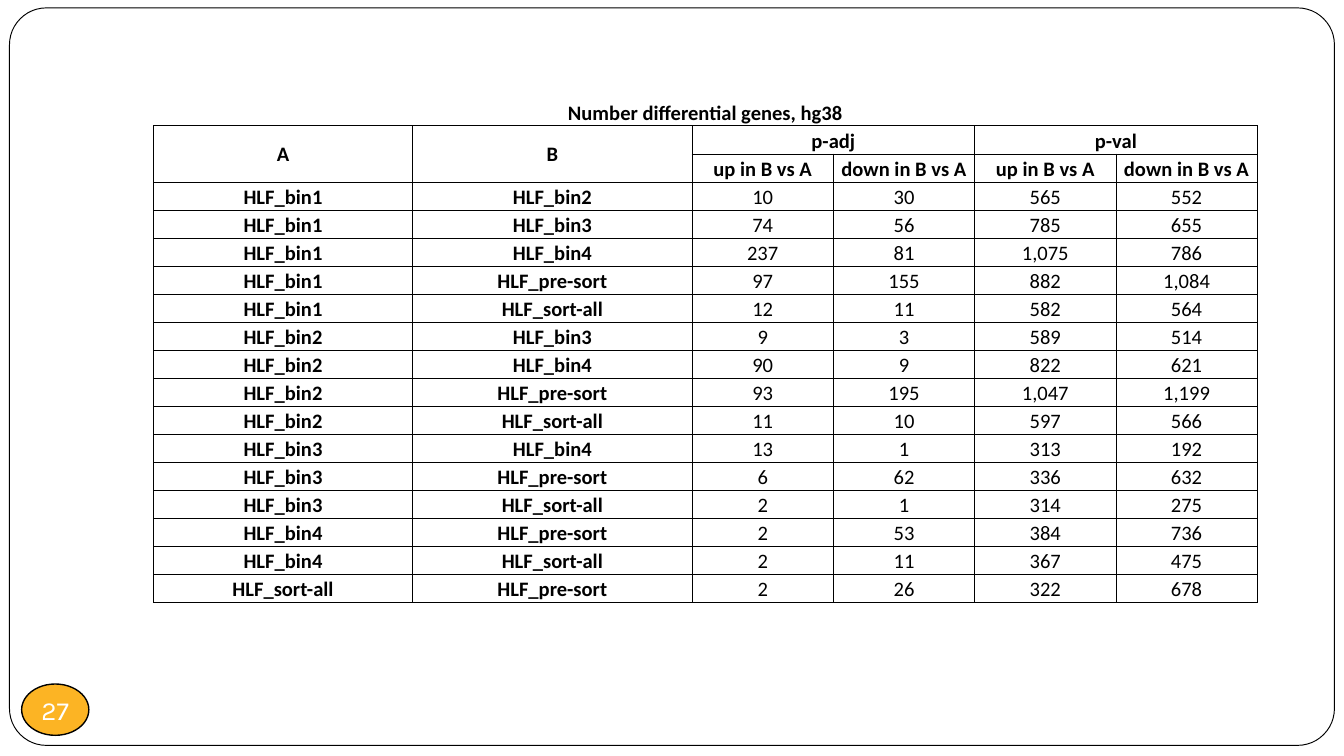
from typing import NamedTuple

from lxml.etree import SubElement
from pptx import Presentation
from pptx.dml.color import RGBColor
from pptx.enum.shapes import MSO_SHAPE
from pptx.enum.text import MSO_ANCHOR, PP_ALIGN
from pptx.oxml.ns import qn
from pptx.util import Cm, Pt

COLORS = {"black": "000000", "white": "FFFFFF", "badge": "FCB424"}
BORDER_WIDTH = Pt(0.5)
COLUMN_WIDTHS = [Cm(4.9), Cm(5.28)] + [Cm(2.67)] * 4
ROW_HEIGHT = Cm(0.53)
TITLE = "Number differential genes, hg38"
DIRECTIONS = ("up in B vs A", "down in B vs A")


class Comparison(NamedTuple):
    a: str
    b: str
    adjusted_up: int
    adjusted_down: int
    value_up: int
    value_down: int


class Span(NamedTuple):
    """A merged block of cells, by its first and last row and column."""
    top: int
    left: int
    bottom: int
    right: int


COMPARISONS = [
    Comparison("HLF_bin1", "HLF_bin2", 10, 30, 565, 552),
    Comparison("HLF_bin1", "HLF_bin3", 74, 56, 785, 655),
    Comparison("HLF_bin1", "HLF_bin4", 237, 81, 1075, 786),
    Comparison("HLF_bin1", "HLF_pre-sort", 97, 155, 882, 1084),
    Comparison("HLF_bin1", "HLF_sort-all", 12, 11, 582, 564),
    Comparison("HLF_bin2", "HLF_bin3", 9, 3, 589, 514),
    Comparison("HLF_bin2", "HLF_bin4", 90, 9, 822, 621),
    Comparison("HLF_bin2", "HLF_pre-sort", 93, 195, 1047, 1199),
    Comparison("HLF_bin2", "HLF_sort-all", 11, 10, 597, 566),
    Comparison("HLF_bin3", "HLF_bin4", 13, 1, 313, 192),
    Comparison("HLF_bin3", "HLF_pre-sort", 6, 62, 336, 632),
    Comparison("HLF_bin3", "HLF_sort-all", 2, 1, 314, 275),
    Comparison("HLF_bin4", "HLF_pre-sort", 2, 53, 384, 736),
    Comparison("HLF_bin4", "HLF_sort-all", 2, 11, 367, 475),
    Comparison("HLF_sort-all", "HLF_pre-sort", 2, 26, 322, 678),
]
HEADER_ROWS = [
    (TITLE, "", "", "", "", ""),
    ("A", "B", "p-adj", "", "p-val", ""),
    ("", "", *DIRECTIONS, *DIRECTIONS),
]
SPANS = [
    Span(0, 0, 0, 5),
    Span(1, 0, 2, 0),
    Span(1, 1, 2, 1),
    Span(1, 2, 1, 3),
    Span(1, 4, 1, 5),
]


def color(name: str) -> RGBColor:
    return RGBColor.from_string(COLORS[name])


def add_outlined_shape(slide, kind, left, top, width, height, fill: str, line_width):
    shape = slide.shapes.add_shape(kind, left, top, width, height)
    shape.shadow.inherit = False
    shape.fill.solid()
    shape.fill.fore_color.rgb = color(fill)
    shape.line.color.rgb = color("black")
    shape.line.width = line_width
    return shape


def style_paragraph(paragraph, font_name: str, size: int, color_name: str, bold: bool) -> None:
    paragraph.alignment = PP_ALIGN.CENTER
    font = paragraph.font
    font.name = font_name
    font.size = Pt(size)
    font.color.rgb = color(color_name)
    font.bold = bold


def set_borders(cell, visible_sides: str) -> None:
    """Draw the sides named by their letters (L, R, T, B) and hide the others."""
    properties = cell._tc.get_or_add_tcPr()
    for side in "LRTB":
        line = SubElement(properties, qn(f"a:ln{side}"), w=str(BORDER_WIDTH))
        if side in visible_sides:
            fill = SubElement(line, qn("a:solidFill"))
            SubElement(fill, qn("a:srgbClr"), val=COLORS["black"])
        else:
            SubElement(line, qn("a:noFill"))


def fill_cell(cell, text: str, bold: bool, visible_sides: str) -> None:
    set_borders(cell, visible_sides)
    cell.fill.background()
    cell.margin_left = cell.margin_right = cell.margin_top = Cm(0.02)
    cell.margin_bottom = 0
    cell.vertical_anchor = MSO_ANCHOR.BOTTOM
    cell.text = text
    style_paragraph(cell.text_frame.paragraphs[0], "Calibri", 11, "black", bold)


def add_gene_table(slide) -> None:
    body = [
        (row.a, row.b, *(f"{count:,}" for count in row[2:])) for row in COMPARISONS
    ]
    rows = HEADER_ROWS + body
    table = slide.shapes.add_table(
        len(rows), len(COLUMN_WIDTHS), Cm(2.9), Cm(1.85),
        sum(COLUMN_WIDTHS), ROW_HEIGHT * len(rows),
    ).table
    table.first_row = table.horz_banding = False
    for column, width in zip(table.columns, COLUMN_WIDTHS):
        column.width = width
    for row_index, texts in enumerate(rows):
        table.rows[row_index].height = ROW_HEIGHT
        visible_sides = "B" if row_index == 0 else "LRTB"
        for column_index, text in enumerate(texts):
            bold = row_index < len(HEADER_ROWS) or column_index < 2
            fill_cell(table.cell(row_index, column_index), text, bold, visible_sides)
    for span in SPANS:
        first_cell = table.cell(span.top, span.left)
        first_cell.merge(table.cell(span.bottom, span.right))
        if span.bottom > span.top:
            first_cell.vertical_anchor = MSO_ANCHOR.MIDDLE


def add_page_badge(slide, number: str) -> None:
    badge = add_outlined_shape(
        slide, MSO_SHAPE.OVAL, Cm(0.41), Cm(12.93), Cm(1.27), Cm(0.97), "badge", Pt(0.75)
    )
    frame = badge.text_frame
    frame.margin_left = frame.margin_right = frame.margin_top = frame.margin_bottom = 0
    frame.word_wrap = False
    frame.vertical_anchor = MSO_ANCHOR.MIDDLE
    frame.text = number
    style_paragraph(frame.paragraphs[0], "Karla", 14, "white", False)


def main() -> None:
    presentation = Presentation()
    presentation.slide_width = Cm(25.4)
    presentation.slide_height = Cm(14.29)
    slide = presentation.slides.add_slide(presentation.slide_layouts[6])
    frame = add_outlined_shape(
        slide, MSO_SHAPE.ROUNDED_RECTANGLE,
        Cm(0.18), Cm(0.15), Cm(25.04), Cm(13.94), "white", BORDER_WIDTH,
    )
    frame.adjustments[0] = 0.05
    add_page_badge(slide, "27")
    add_gene_table(slide)
    presentation.save("out.pptx")


if __name__ == "__main__":
    main()
